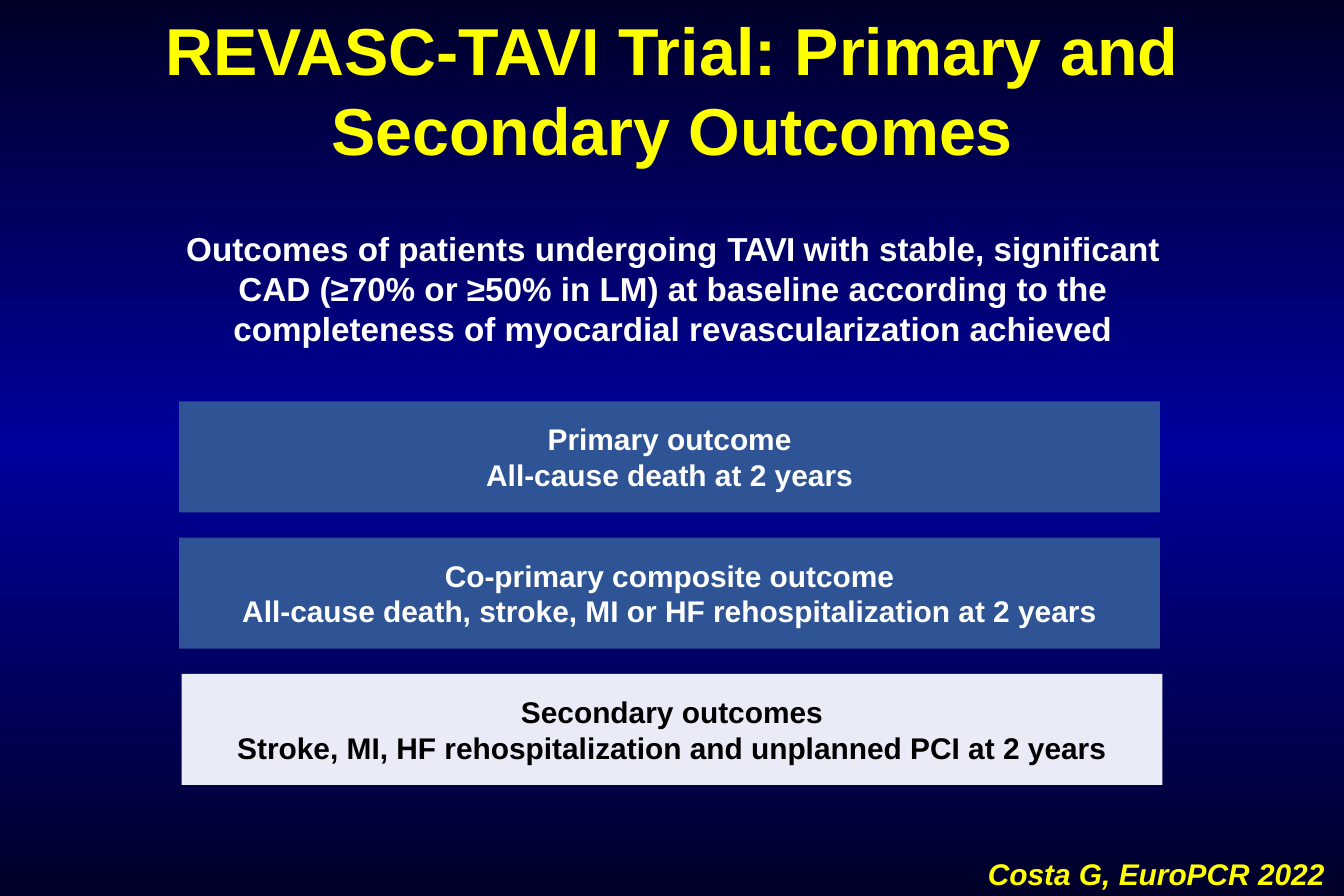
from copy import deepcopy
from dataclasses import dataclass

from pptx import Presentation
from pptx.dml.color import RGBColor
from pptx.enum.shapes import MSO_SHAPE
from pptx.enum.text import MSO_ANCHOR, MSO_AUTO_SIZE, PP_ALIGN
from pptx.util import Inches, Pt

RECT = MSO_SHAPE.RECTANGLE
MIDDLE = MSO_ANCHOR.MIDDLE
GROW = MSO_AUTO_SIZE.SHAPE_TO_FIT_TEXT
LEFT, CENTER = PP_ALIGN.LEFT, PP_ALIGN.CENTER


@dataclass(frozen=True)
class Theme:
    font: str = "Arial"
    night: str = "000028"
    royal: str = "00009C"
    yellow: str = "FFFF00"
    white: str = "FFFFFF"
    black: str = "000000"
    steel: str = "2E5496"
    mist: str = "E9EBF6"
    title: int = 40
    intro: int = 20
    body: int = 18


THEME = Theme()

OUTCOMES = [
    (1.5, THEME.steel, THEME.white,
     "Primary outcome", "All-cause death at 2 years"),
    (1.5, THEME.steel, THEME.white,
     "Co-primary composite outcome",
     "All-cause death, stroke, MI or HF rehospitalization at 2 years"),
    (1.52, THEME.mist, THEME.black,
     "Secondary outcomes",
     "Stroke, MI, HF rehospitalization and unplanned PCI at 2 years"),
]
BOX_TOP, BOX_PITCH, BOX_WIDTH, BOX_HEIGHT = 3.36, 1.14, 8.21, 0.93


def paint_background(s):
    fill = s.background.fill
    fill.gradient()
    fill.gradient_angle = 90
    stop_list = s._element.xpath(".//a:gsLst")[0]
    stop_list.append(deepcopy(stop_list[0]))
    colors = (THEME.night, THEME.royal, THEME.night)
    for stop, position, color in zip(fill.gradient_stops, (0, 0.5, 1), colors):
        stop.position = position
        stop.color.rgb = RGBColor.from_string(color)


def add_run(p, text, size, color, italic=False, tracking=0):
    r = p.add_run()
    r.text = text
    r.font.name = THEME.font
    r.font.size = Pt(size)
    r.font.bold = True
    r.font.italic = italic
    r.font.color.rgb = RGBColor.from_string(color)
    if tracking:
        r._r.get_or_add_rPr().set("spc", str(round(tracking * 100)))


def add_text(s, box, align):
    sp = s.shapes.add_textbox(*map(Inches, box))
    tf = sp.text_frame
    tf.word_wrap = True
    tf.auto_size = GROW
    tf.paragraphs[0].alignment = align
    return tf


def add_outcome(s, left, top, fill, color, lines):
    sp = s.shapes.add_shape(
        RECT, Inches(left), Inches(top), Inches(BOX_WIDTH), Inches(BOX_HEIGHT))
    sp.shadow.inherit = False
    sp.fill.solid()
    sp.fill.fore_color.rgb = RGBColor.from_string(fill)
    sp.line.fill.background()
    tf = sp.text_frame
    tf.word_wrap = True
    tf.vertical_anchor = MIDDLE
    for i, line in enumerate(lines):
        p = tf.add_paragraph() if i else tf.paragraphs[0]
        p.alignment = CENTER
        add_run(p, line, THEME.body, color)


def add_intro(s):
    tf = add_text(s, (1.53, 1.9, 8.21, 1.02), CENTER)
    tf.margin_left = tf.margin_right = tf.margin_bottom = 0
    tf.margin_top = Inches(0.01)
    p = tf.paragraphs[0]
    for text, tracking in (
        ("Outcomes of patients undergoing ", 0),
        ("TAVI ", -0.6),
        ("with stable, significant CAD (≥70% or ≥50% in LM) at baseline "
         "according to the completeness of myocardial revascularization "
         "achieved", 0),
    ):
        add_run(p, text, THEME.intro, THEME.white, tracking=tracking)


def main():
    prs = Presentation()
    prs.slide_width, prs.slide_height = Inches(11.25), Inches(7.5)
    s = prs.slides.add_slide(prs.slide_layouts[6])
    paint_background(s)

    title = add_text(s, (0, 0.03, 11.25, 1.45), CENTER)
    add_run(title.paragraphs[0],
            "REVASC-TAVI Trial: Primary and Secondary Outcomes",
            THEME.title, THEME.yellow)

    citation = add_text(s, (8.17, 7.11, 3.08, 0.4), LEFT)
    add_run(citation.paragraphs[0], "Costa G, EuroPCR 2022",
            THEME.body, THEME.yellow, italic=True)

    add_intro(s)
    for i, (left, fill, color, *lines) in enumerate(OUTCOMES):
        add_outcome(s, left, BOX_TOP + i * BOX_PITCH, fill, color, lines)

    prs.save("out.pptx")


if __name__ == "__main__":
    main()
